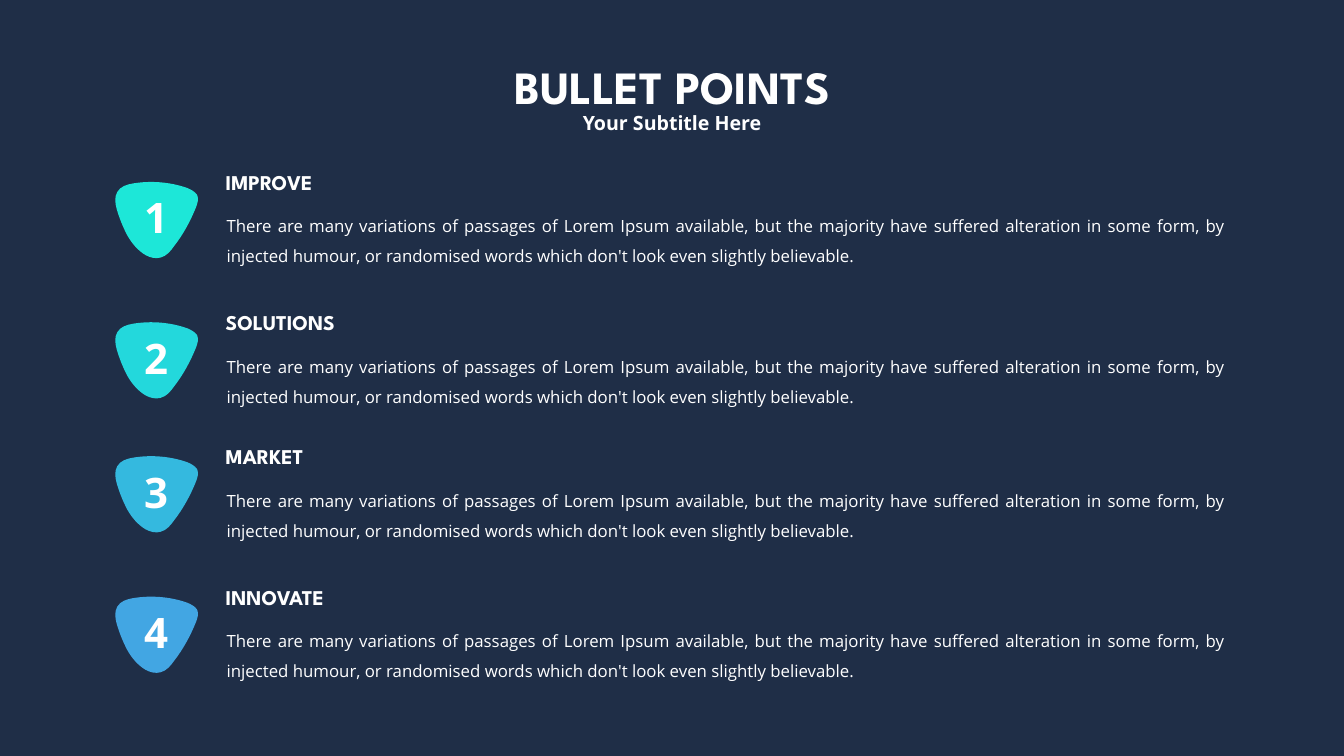
from dataclasses import dataclass
from math import cos, radians, sin

from lxml.etree import SubElement as add_node
from pptx import Presentation
from pptx.dml.color import RGBColor
from pptx.enum.text import MSO_ANCHOR as Anchor, MSO_AUTO_SIZE as Fit, PP_ALIGN as Align
from pptx.oxml.ns import qn
from pptx.shapes.autoshape import Shape
from pptx.slide import Slide
from pptx.util import Cm, Pt

NAVY = RGBColor(0x1F, 0x2E, 0x47)
WHITE = RGBColor(0xFF, 0xFF, 0xFF)
MINT = RGBColor(0x1D, 0xE7, 0xD8)
TEAL = RGBColor(0x23, 0xD8, 0xDC)
SKY = RGBColor(0x34, 0xB9, 0xDF)
BLUE = RGBColor(0x42, 0xA6, 0xE3)

HEAD, BODY = "League Spartan", "Open Sans"
LOREM = (
    "There are many variations of passages of Lorem Ipsum available, but the "
    "majority have suffered alteration in some form, by injected humour, or "
    "randomised words which don't look even slightly believable."
)

# Badge outline around its centre: a start, then curves of three points each
UNIT = 0.0254  # cm
TILT = 60.4
START = (-65, 47)
CURVES = [
    ((-74, 30), (-81, 12), (-86, -5)),
    ((-89, -16), (-91, -29), (-85, -39)),
    ((-79, -50), (-66, -54), (-54, -56)),
    ((-18, -62), (20, -59), (54, -47)),
    ((61, -44), (69, -40), (73, -34)),
    ((73, -33), (73, -33), (74, -32)),
    ((77, -25), (74, -16), (71, -8)),
    ((60, 19), (46, 45), (28, 68)),
    ((21, 78), (13, 88), (1, 91)),
    ((-9, 94), (-20, 91), (-29, 86)),
    ((-44, 77), (-56, 63), START),
]


@dataclass
class Box:
    left: float
    top: float
    width: float
    height: float


@dataclass
class Style:
    font: str
    size: float
    bold: bool = True
    align: Align = Align.LEFT
    anchor: Anchor = Anchor.MIDDLE
    wrap: bool = False
    line: float | None = None
    before: float = 0
    inset: tuple[float, float] = (0.25, 0.13)


@dataclass
class Point:
    top: float
    name: str
    width: float
    color: RGBColor


TITLE = Style(HEAD, 66, align=Align.CENTER, anchor=Anchor.TOP, line=100)
SUB = Style(BODY, 28, align=Align.CENTER)
NUMBER = Style(BODY, 60)
LABEL = Style(HEAD, 30)
DETAIL = Style(BODY, 24, bold=False, align=Align.JUSTIFY, anchor=Anchor.TOP,
               wrap=True, line=43, before=4.8, inset=(0.61, 0.3))

POINTS = [
    Point(8.64, "IMPROVE", 5.72, MINT),
    Point(15.71, "SOLUTIONS", 7.06, TEAL),
    Point(22.46, "MARKET", 5.23, SKY),
    Point(29.54, "INNOVATE", 6.48, BLUE),
]


def place(shape: Shape, box: Box) -> None:
    for side in ("left", "top", "width", "height"):
        setattr(shape, side, Cm(getattr(box, side)))


def write(shape: Shape, text: str, style: Style) -> None:
    frame = shape.text_frame
    across, down = (Cm(size) for size in style.inset)
    para = frame.paragraphs[0]
    run = para.add_run()
    run.text = text
    formats = {
        frame: {"word_wrap": style.wrap, "auto_size": Fit.SHAPE_TO_FIT_TEXT,
                "vertical_anchor": style.anchor,
                "margin_left": across, "margin_right": across,
                "margin_top": down, "margin_bottom": down},
        para: {"alignment": style.align, "space_before": Pt(style.before),
               "line_spacing": Pt(style.line) if style.line else None},
        run.font: {"name": style.font, "size": Pt(style.size), "bold": style.bold},
    }
    for target, values in formats.items():
        for key, value in values.items():
            setattr(target, key, value)
    run.font.color.rgb = WHITE


def add_text(slide: Slide, box: Box, text: str, style: Style) -> None:
    shape = slide.shapes.add_textbox(0, 0, 0, 0)
    place(shape, box)
    write(shape, text, style)


def draw_curves(badge: Shape, box: Box) -> None:
    """Give the badge its curves, turned back by the tilt it is drawn with."""
    c, s = cos(radians(TILT)), sin(radians(TILT))
    outline = badge.element.find(".//" + qn("a:path"))
    outline.clear()
    outline.set("w", str(Cm(box.width)))
    outline.set("h", str(Cm(box.height)))
    for dots in [(START,), *CURVES]:
        tag = "a:moveTo" if len(dots) == 1 else "a:cubicBezTo"
        node = add_node(outline, qn(tag))
        for x, y in dots:
            dot = add_node(node, qn("a:pt"))
            dot.set("x", str(Cm(box.width / 2 + (x * c + y * s) * UNIT)))
            dot.set("y", str(Cm(box.height / 2 + (y * c - x * s) * UNIT)))
    add_node(outline, qn("a:close"))


def add_badge(slide: Slide, box: Box, color: RGBColor) -> None:
    pen = slide.shapes.build_freeform()
    pen.add_line_segments([(Cm(box.width), Cm(box.height))])
    badge = pen.convert_to_shape()
    place(badge, box)
    draw_curves(badge, box)
    badge.rotation = TILT
    badge.shadow.inherit = False
    badge.fill.solid()
    badge.fill.fore_color.rgb = color
    badge.line.fill.background()


def add_point(slide: Slide, rank: int, point: Point) -> None:
    top = point.top
    add_badge(slide, Box(5.97, top, 4.19, 4.06), point.color)
    add_text(slide, Box(7.01, top + 0.89, 1.73, 2.82), str(rank), NUMBER)
    add_text(slide, Box(11.12, top - 0.23, point.width, 1.55), point.name, LABEL)
    add_text(slide, Box(10.81, top + 1.45, 51.51, 3.51), LOREM, DETAIL)


def main() -> None:
    deck = Presentation()
    deck.slide_width, deck.slide_height = Cm(67.72), Cm(38.1)
    slide = deck.slides.add_slide(deck.slide_layouts[5])
    slide.background.fill.solid()
    slide.background.fill.fore_color.rgb = NAVY

    title = slide.shapes.title
    place(title, Box(24.28, 2.06, 19.18, 3.63))
    write(title, "BULLET POINTS", TITLE)
    add_text(slide, Box(29.06, 5.46, 9.6, 1.45), "Your Subtitle Here", SUB)
    for rank, point in enumerate(POINTS, 1):
        add_point(slide, rank, point)
    deck.save("out.pptx")


if __name__ == "__main__":
    main()
